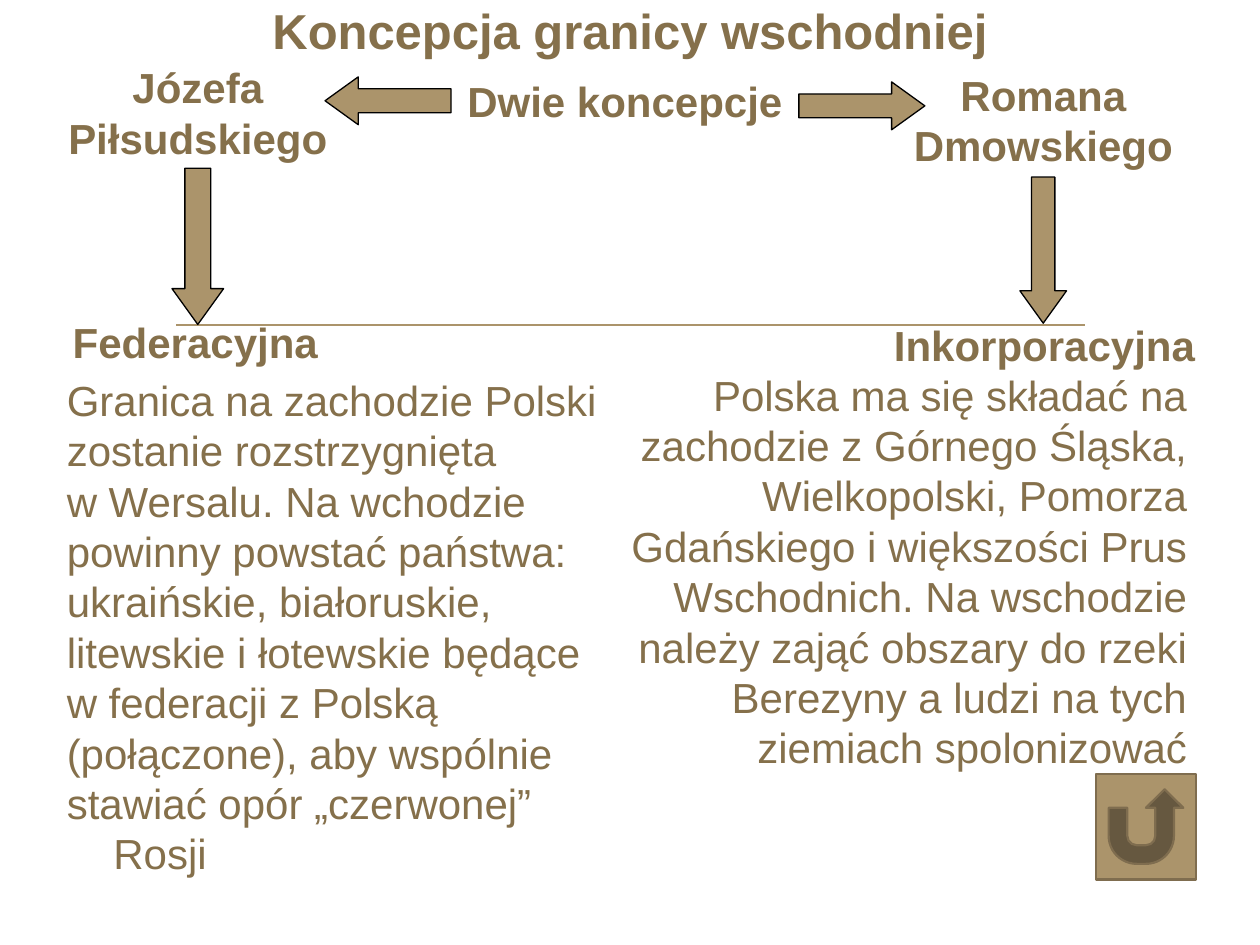
from dataclasses import dataclass

from lxml import etree
from pptx import Presentation
from pptx.dml.color import RGBColor
from pptx.enum.shapes import MSO_CONNECTOR, MSO_SHAPE
from pptx.enum.text import MSO_ANCHOR, MSO_AUTO_SIZE, PP_ALIGN
from pptx.oxml.ns import qn
from pptx.util import Inches, Pt

LEFT, CENTER, RIGHT = PP_ALIGN.LEFT, PP_ALIGN.CENTER, PP_ALIGN.RIGHT
LEFT_ARROW = MSO_SHAPE.LEFT_ARROW
RETURN_BUTTON = MSO_SHAPE.ACTION_BUTTON_RETURN
STRAIGHT = MSO_CONNECTOR.STRAIGHT
TWO_CONTENT_LAYOUT = 3
FONT = "Arial"
TEXT_COLOR, SAND, BROWN, BLACK = "85704B", "AB946B", "7F6D4F", "000000"


@dataclass
class Box:
    left: float
    top: float
    width: float
    height: float

    def lengths(self):
        return [Inches(v) for v in (self.left, self.top, self.width, self.height)]


@dataclass
class Label:
    text: str
    box: Box


@dataclass
class Arrow:
    box: Box
    rotation: int


@dataclass
class Description:
    paragraphs: list[str]
    box: Box
    alignment: PP_ALIGN


LABELS = [
    Label("Dwie koncepcje", Box(3.58, 0.55, 2.76, 0.5)),
    Label("Józefa Piłsudskiego", Box(0.43, 0.44, 2.28, 0.91)),
    Label("Romana Dmowskiego", Box(7.14, 0.5, 2.28, 0.91)),
    Label("Federacyjna", Box(0.41, 2.46, 2.28, 0.5)),
    Label("Inkorporacyjna", Box(6.94, 2.49, 2.7, 0.5)),
]
ARROWS = [
    Arrow(Box(2.58, 0.61, 1, 0.38), 0),
    Arrow(Box(6.34, 0.65, 1, 0.38), 180),
    Arrow(Box(0.95, 1.75, 1.24, 0.41), 270),
    Arrow(Box(7.7, 1.8, 1.16, 0.37), 270),
]
DESCRIPTIONS = [
    Description(
        [
            "Granica na zachodzie Polski zostanie rozstrzygnięta\v"
            "w Wersalu. Na wchodzie powinny powstać państwa: ukraińskie, "
            "białoruskie, litewskie i łotewskie będące w federacji z Polską "
            "(połączone), aby wspólnie stawiać opór „czerwonej”",
            "Rosji",
        ],
        Box(0.43, 2.92, 4.49, 4.14),
        LEFT,
    ),
    Description(
        [
            "Polska ma się składać na zachodzie z Górnego Śląska, "
            "Wielkopolski, Pomorza Gdańskiego i większości Prus Wschodnich. "
            "Na wschodzie należy zająć obszary do rzeki Berezyny a ludzi "
            "na tych ziemiach spolonizować"
        ],
        Box(4.84, 2.88, 4.68, 3.33),
        RIGHT,
    ),
]


def color(value: str) -> RGBColor:
    return RGBColor.from_string(value)


def place(shape, box: Box) -> None:
    shape.left, shape.top, shape.width, shape.height = box.lengths()


def format_text(shape, size: int, bold: bool, alignment: PP_ALIGN) -> None:
    frame = shape.text_frame
    frame.word_wrap = True
    frame.auto_size = MSO_AUTO_SIZE.NONE
    frame.vertical_anchor = MSO_ANCHOR.TOP
    for paragraph in frame.paragraphs:
        paragraph.alignment = alignment
        paragraph.space_before = Pt(0)
        font = paragraph.font
        font.name, font.size, font.bold = FONT, Pt(size), bold
        font.color.rgb = color(TEXT_COLOR)


def add_label(slide, label: Label) -> None:
    shape = slide.shapes.add_textbox(*label.box.lengths())
    shape.text_frame.text = label.text
    format_text(shape, 24, True, CENTER)


def fill_description(placeholder, description: Description) -> None:
    place(placeholder, description.box)
    placeholder.text_frame.text = "\n".join(description.paragraphs)
    for index, paragraph in enumerate(placeholder.text_frame.paragraphs):
        properties = paragraph._p.get_or_add_pPr()
        properties.set("marL", str(Inches(0.37 * index)))
        properties.set("indent", "0")
        etree.SubElement(properties, qn("a:buNone"))
    format_text(placeholder, 24, False, description.alignment)


def add_filled_shape(slide, kind: MSO_SHAPE, box: Box, line: str, width: float):
    shape = slide.shapes.add_shape(kind, *box.lengths())
    shape.shadow.inherit = False
    shape.fill.solid()
    shape.fill.fore_color.rgb = color(SAND)
    shape.line.color.rgb = color(line)
    shape.line.width = Pt(width)
    return shape


def add_arrow(slide, arrow: Arrow) -> None:
    shape = add_filled_shape(slide, LEFT_ARROW, arrow.box, BLACK, 0.75)
    shape.adjustments[0] = 0.5
    shape.adjustments[1] = 0.695
    shape.rotation = arrow.rotation


def add_divider(slide) -> None:
    height = Inches(2.58)
    divider = slide.shapes.add_connector(
        STRAIGHT, Inches(1.4), height, Inches(8.61), height
    )
    divider.line.color.rgb = color(SAND)
    divider.line.width = Pt(1.25)
    etree.SubElement(divider._element.spPr, qn("a:effectLst"))


def main() -> None:
    presentation = Presentation()
    presentation.slide_width = Inches(10)
    presentation.slide_height = Inches(7.5)
    layout = presentation.slide_layouts[TWO_CONTENT_LAYOUT]
    slide = presentation.slides.add_slide(layout)

    title, *bodies = slide.placeholders
    place(title, Box(0, -0.05, 10, 0.57))
    title.text_frame.text = "Koncepcja granicy wschodniej"
    format_text(title, 28, True, CENTER)

    add_divider(slide)
    add_filled_shape(slide, RETURN_BUTTON, Box(8.7, 6.14, 0.79, 0.84), BROWN, 1.25)
    for arrow in ARROWS:
        add_arrow(slide, arrow)
    for label in LABELS:
        add_label(slide, label)
    for placeholder, description in zip(bodies, DESCRIPTIONS):
        fill_description(placeholder, description)

    presentation.save("out.pptx")


if __name__ == "__main__":
    main()
